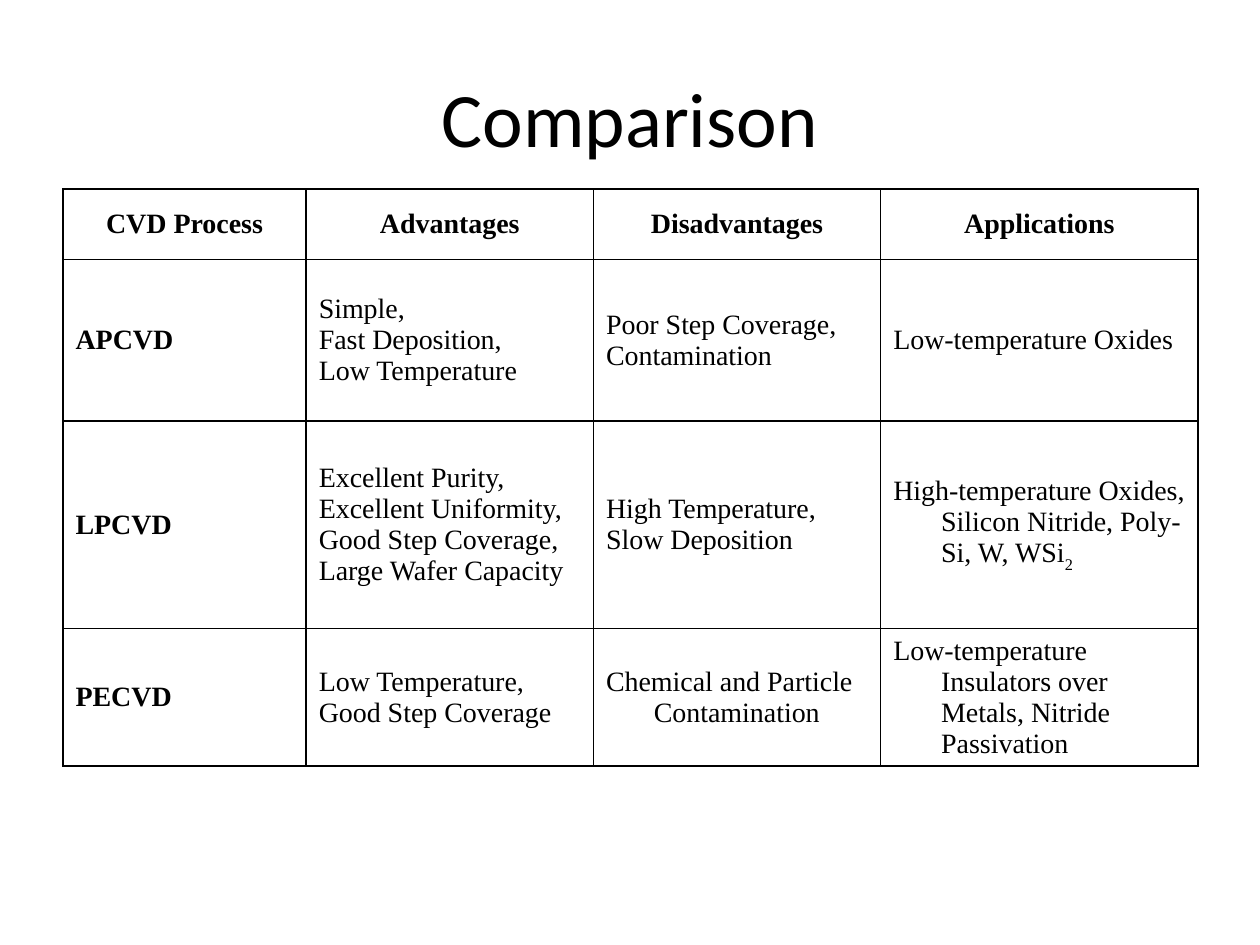
from lxml import etree
from pptx import Presentation
from pptx.dml.color import RGBColor
from pptx.enum.text import MSO_ANCHOR, PP_ALIGN
from pptx.oxml.ns import qn
from pptx.util import Inches, Pt

BLACK = RGBColor(0x00, 0x00, 0x00)
CENTER, LEFT = PP_ALIGN.CENTER, PP_ALIGN.LEFT
MIDDLE = MSO_ANCHOR.MIDDLE
TITLE_ONLY = 5
HANGING_INDENT = Inches(0.38)

COLUMN_WIDTHS = [1.93, 2.28, 2.28, 2.52]
ROW_HEIGHTS = [0.56, 1.28, 1.65, 0.92]
# Each cell is a list of paragraphs; "_" starts a subscript.
ROWS = [
    [["CVD Process"], ["Advantages"], ["Disadvantages"], ["Applications"]],
    [["APCVD"],
     ["Simple,", "Fast Deposition,", "Low Temperature"],
     ["Poor Step Coverage,", "Contamination"],
     ["Low-temperature Oxides"]],
    [["LPCVD"],
     ["Excellent Purity,", "Excellent Uniformity,", "Good Step Coverage,",
      "Large Wafer Capacity"],
     ["High Temperature,", "Slow Deposition"],
     ["High-temperature Oxides, Silicon Nitride, Poly-Si, W, WSi_2"]],
    [["PECVD"],
     ["Low Temperature,", "Good Step Coverage"],
     ["Chemical and Particle Contamination"],
     ["Low-temperature Insulators over Metals, Nitride Passivation"]],
]


def format_font(font, name, size, bold=False):
    font.name, font.size, font.bold = name, Pt(size), bold
    font.color.rgb = BLACK


def add_title(slide, text, left, top, width, height):
    title = slide.shapes.title
    title.left, title.top, title.width, title.height = left, top, width, height
    title.text_frame.text = text
    title.text_frame.vertical_anchor = MIDDLE
    paragraph = title.text_frame.paragraphs[0]
    paragraph.alignment = CENTER
    format_font(paragraph.font, "Calibri", 44)


def add_borders(cell):
    properties = cell._tc.get_or_add_tcPr()
    for side in ("lnL", "lnR", "lnT", "lnB"):
        line = etree.SubElement(properties, qn(f"a:{side}"), w=str(Pt(1)))
        fill = etree.SubElement(line, qn("a:solidFill"))
        etree.SubElement(fill, qn("a:srgbClr"), val=str(BLACK))


def write_paragraph(paragraph, text, alignment, bold):
    base, _, subscript = text.partition("_")
    paragraph.add_run().text = base
    if subscript:
        run = paragraph.add_run()
        run.text = subscript
        run._r.get_or_add_rPr().set("baseline", "-30000")
    paragraph.alignment = alignment
    format_font(paragraph.font, "Times New Roman", 16, bold)
    properties = paragraph._p.get_or_add_pPr()
    properties.set("marL", str(HANGING_INDENT))
    properties.set("indent", str(-HANGING_INDENT))


def fill_cell(cell, lines, alignment, bold):
    add_borders(cell)
    cell.fill.background()
    cell.vertical_anchor = MIDDLE
    frame = cell.text_frame
    for index, line in enumerate(lines):
        paragraph = frame.add_paragraph() if index else frame.paragraphs[0]
        write_paragraph(paragraph, line, alignment, bold)


def add_comparison_table(slide, left, top, width, height):
    table = slide.shapes.add_table(len(ROWS), len(COLUMN_WIDTHS),
                                   left, top, width, height).table
    table.first_row = table.horz_banding = False
    for column, column_width in zip(table.columns, COLUMN_WIDTHS):
        column.width = Inches(column_width)
    for row, row_height in zip(table.rows, ROW_HEIGHTS):
        row.height = Inches(row_height)
    for row_index, row in enumerate(ROWS):
        for column_index, lines in enumerate(row):
            is_header = row_index == 0
            fill_cell(table.cell(row_index, column_index), lines,
                      CENTER if is_header else LEFT,
                      is_header or column_index == 0)


def main():
    presentation = Presentation()
    presentation.slide_width, presentation.slide_height = Inches(10), Inches(7.5)
    slide = presentation.slides.add_slide(presentation.slide_layouts[TITLE_ONLY])
    add_title(slide, "Comparison",
              Inches(0.5), Inches(0.3), Inches(9), Inches(1.25))
    add_comparison_table(slide, Inches(0.5), Inches(1.5),
                         Inches(sum(COLUMN_WIDTHS)), Inches(sum(ROW_HEIGHTS)))
    presentation.save("out.pptx")


if __name__ == "__main__":
    main()
